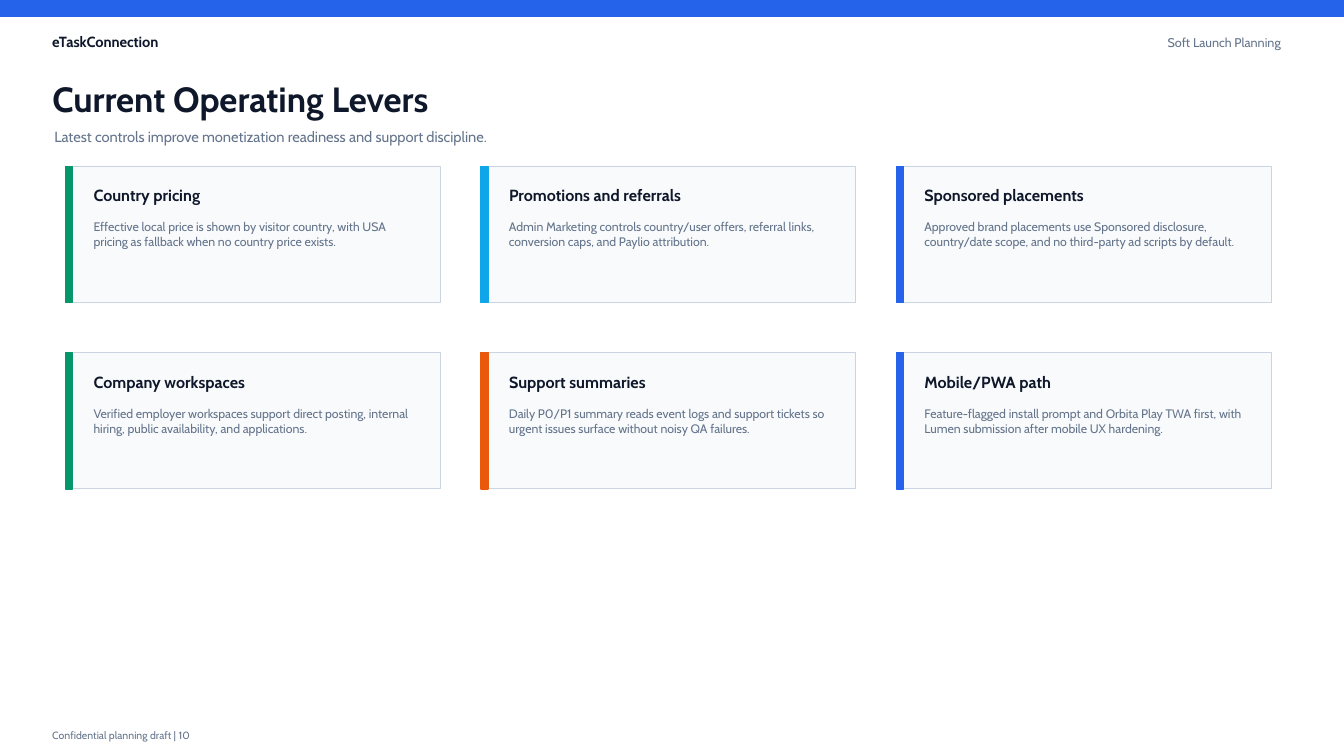
from pptx import Presentation
from pptx.dml.color import RGBColor
from pptx.enum.shapes import MSO_SHAPE as Shape
from pptx.enum.text import MSO_ANCHOR as Anchor, MSO_AUTO_SIZE as AutoSize, PP_ALIGN as Align
from pptx.util import Inches, Pt

FONT = "Cabin"
COLORS = {
    "ink": "0F172A", "muted": "64748B", "panel": "F8FAFC", "border": "CBD5E1",
    "blue": "2563EB", "green": "059669", "sky": "0EA5E9", "orange": "EA580C",
}
LEVERS = [
    ("Country pricing", "green",
     "Effective local price is shown by visitor country, with USA pricing as fallback "
     "when no country price exists."),
    ("Promotions and referrals", "sky",
     "Admin Marketing controls country/user offers, referral links, conversion caps, "
     "and Paylio attribution."),
    ("Sponsored placements", "blue",
     "Approved brand placements use Sponsored disclosure, country/date scope, and no "
     "third-party ad scripts by default."),
    ("Company workspaces", "green",
     "Verified employer workspaces support direct posting, internal hiring, public "
     "availability, and applications."),
    ("Support summaries", "orange",
     "Daily P0/P1 summary reads event logs and support tickets so urgent issues surface "
     "without noisy QA failures."),
    ("Mobile/PWA path", "blue",
     "Feature-flagged install prompt and Orbita Play TWA first, with Lumen submission "
     "after mobile UX hardening."),
]


def color(name):
    """Return the named palette colour."""
    return RGBColor.from_string(COLORS[name])


def add_rect(page, left, top, width, height, fill, line, weight=1):
    """Add a flat rectangle, measured in inches."""
    rect = page.shapes.add_shape(
        Shape.RECTANGLE, Inches(left), Inches(top), Inches(width), Inches(height))
    rect.shadow.inherit = False
    rect.fill.solid()
    rect.fill.fore_color.rgb = color(fill)
    rect.line.color.rgb = color(line)
    rect.line.width = Pt(weight)


def set_text(box, text, size, ink, bold=False, align=Align.LEFT):
    """Fill a box with one formatted paragraph."""
    frame = box.text_frame
    frame.text = text
    frame.word_wrap = True
    frame.auto_size = AutoSize.NONE
    frame.vertical_anchor = Anchor.TOP
    para = frame.paragraphs[0]
    para.alignment = align
    para.font.name = FONT
    para.font.size = Pt(size)
    para.font.bold = bold
    para.font.color.rgb = color(ink)


def add_text(page, left, top, width, height, *style, **options):
    """Add a text box, measured in inches."""
    box = page.shapes.add_textbox(Inches(left), Inches(top), Inches(width), Inches(height))
    set_text(box, *style, **options)


def add_header(page, width):
    """Add the top band, the running header, the title and the subtitle."""
    add_rect(page, 0, 0, width, 0.16, "blue", "blue")
    add_text(page, 0.42, 0.28, 2.4, 0.25, "eTaskConnection", 10.5, "ink", bold=True)
    add_text(page, width - 2.98, 0.3, 2.45, 0.26, "Soft Launch Planning", 9, "muted",
             align=Align.RIGHT)
    title = page.shapes.title
    title.left, title.top = Inches(0.42), Inches(0.72)
    title.width, title.height = Inches(9.2), Inches(0.5)
    set_text(title, "Current Operating Levers", 25, "ink", bold=True)
    add_text(page, 0.44, 1.22, 10.4, 0.34,
             "Latest controls improve monetization readiness and support discipline.",
             10.5, "muted")


def add_card(page, left, top, width, height, heading, accent, detail):
    """Add one lever card with its accent bar, heading and detail."""
    add_rect(page, left, top, width, height, "panel", "border", 0.7)
    add_rect(page, left, top, 0.07, height, accent, accent)
    add_text(page, left + 0.18, top + 0.14, width - 0.3, 0.25, heading, 11.5, "ink", bold=True)
    add_text(page, left + 0.18, top + 0.48, width - 0.28, height - 0.58, detail, 8.8, "muted")


def add_card_grid(page, left, top, columns=3, gap_x=0.4, gap_y=0.5):
    """Lay the lever cards out in rows."""
    width, height = 3.72, 1.35
    for index, lever in enumerate(LEVERS):
        row, column = divmod(index, columns)
        add_card(page, left + column * (width + gap_x), top + row * (height + gap_y),
                 width, height, *lever)


def main():
    """Build and save the deck."""
    deck = Presentation()
    deck.slide_width, deck.slide_height = Inches(13.33), Inches(7.5)
    page = deck.slides.add_slide(deck.slide_layouts[5])
    add_header(page, 13.33)
    add_card_grid(page, 0.65, 1.65)
    add_text(page, 0.42, 7.18, 4.8, 0.2, "Confidential planning draft | 10", 7.5, "muted")
    deck.save("out.pptx")


if __name__ == "__main__":
    main()
